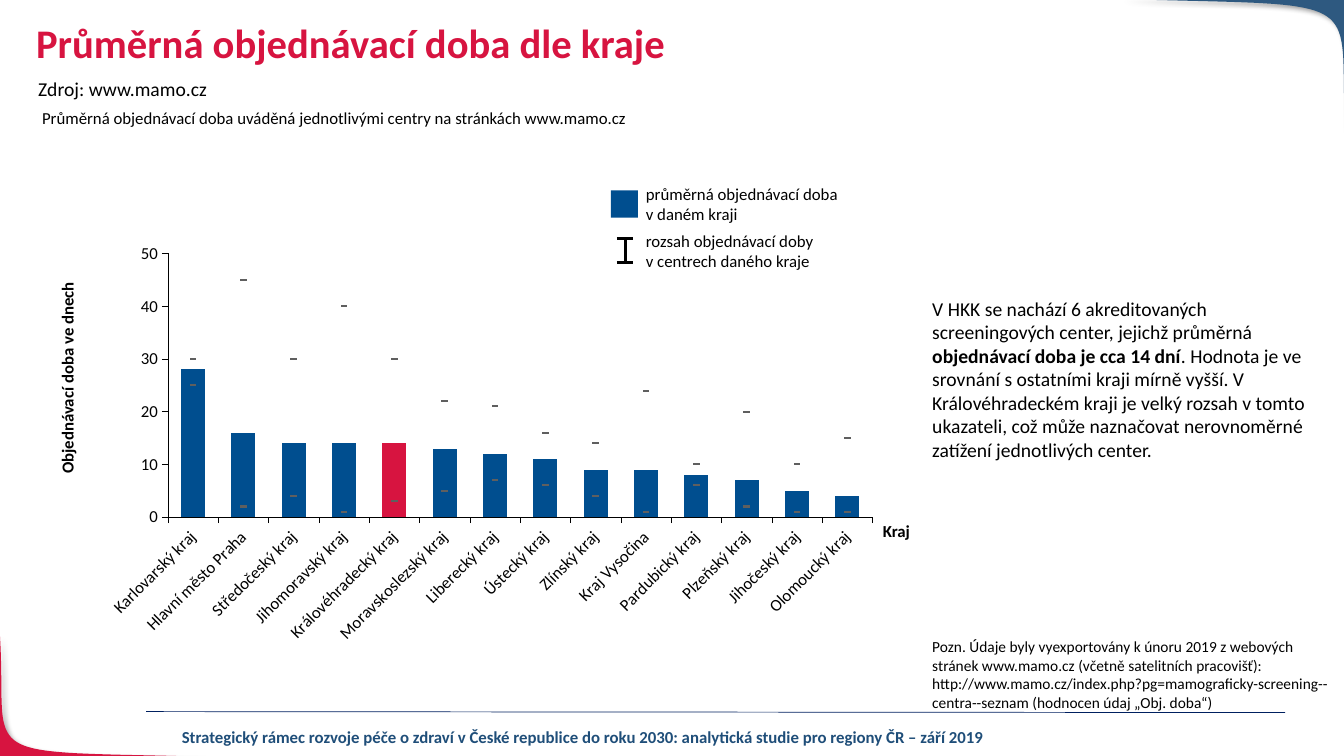
from lxml.etree import SubElement
from pptx import Presentation
from pptx.chart.data import CategoryChartData
from pptx.dml.color import RGBColor
from pptx.enum.chart import XL_CHART_TYPE, XL_MARKER_STYLE, XL_TICK_MARK
from pptx.enum.shapes import MSO_CONNECTOR, MSO_SHAPE
from pptx.enum.text import PP_ALIGN
from pptx.oxml import parse_xml
from pptx.oxml.ns import nsdecls, qn
from pptx.util import Pt

BLACK = RGBColor(0x00, 0x00, 0x00)
RED = RGBColor(0xD7, 0x14, 0x40)
BLUE = RGBColor(0x00, 0x4E, 0x8F)
STEEL = RGBColor(0x2E, 0x59, 0x80)
NAVY = RGBColor(0x00, 0x20, 0x60)
FOOT = RGBColor(0x1F, 0x4E, 0x79)
GREY = RGBColor(0x5F, 0x5F, 0x5F)

WAITS = [
    ("Karlovarský kraj", 28, 25, 30),
    ("Hlavní město Praha", 16, 2, 45),
    ("Středočeský kraj", 14, 4, 30),
    ("Jihomoravský kraj", 14, 1, 40),
    ("Královéhradecký kraj", 14, 3, 30),
    ("Moravskoslezský kraj", 13, 5, 22),
    ("Liberecký kraj", 12, 7, 21),
    ("Ústecký kraj", 11, 6, 16),
    ("Zlínský kraj", 9, 4, 14),
    ("Kraj Vysočina", 9, 1, 24),
    ("Pardubický kraj", 8, 6, 10),
    ("Plzeňský kraj", 7, 2, 20),
    ("Jihočeský kraj", 5, 1, 10),
    ("Olomoucký kraj", 4, 1, 15),
]
MARKED = 4

LAYOUT = """<c:layout %s><c:manualLayout><c:layoutTarget val="inner"/>
<c:xMode val="edge"/><c:yMode val="edge"/><c:x val="0.137"/><c:y val="0.061"/>
<c:w val="0.852"/><c:h val="0.58"/></c:manualLayout></c:layout>"""
LINES = """<c:lineChart %s><c:grouping val="standard"/>
<c:varyColors val="0"/><c:marker val="1"/></c:lineChart>"""
SHADOW = """<a:effectLst %s><a:outerShdw blurRad="50800" dist="38100" dir="2700000">
<a:srgbClr val="000000"><a:alpha val="40000"/></a:srgbClr></a:outerShdw></a:effectLst>"""


class Board:
    def __init__(self, slide, font):
        self.shapes = slide.shapes
        self.font = font

    def style(self, font, size, color=BLACK, bold=False):
        font.name = self.font
        font.size = Pt(size)
        font.color.rgb = color
        font.bold = bold

    def text(self, box, words, size, color=BLACK, bold=False, align=PP_ALIGN.LEFT, turn=0):
        shape = self.shapes.add_textbox(*map(Pt, box))
        shape.rotation = turn
        frame = shape.text_frame
        frame.word_wrap = True
        frame.text = words
        for line in frame.paragraphs:
            line.alignment = align
            for run in line.runs:
                self.style(run.font, size, color, bold)
        return frame

    def rect(self, box, color):
        shape = self.shapes.add_shape(MSO_SHAPE.RECTANGLE, *map(Pt, box))
        shape.shadow.inherit = False
        shape.fill.solid()
        shape.fill.fore_color.rgb = color
        shape.line.fill.background()

    def line(self, ends, color, width):
        line = self.shapes.add_connector(MSO_CONNECTOR.STRAIGHT, *map(Pt, ends))
        line.line.color.rgb = color
        line.line.width = Pt(width)
        SubElement(line._element.spPr, qn("a:effectLst"))

    def curve(self, knots, edge, color, steps=40):
        dots = []
        for step in range(steps + 1):
            t = step / steps
            parts = ((1 - t) ** 3, 3 * t * (1 - t) ** 2, 3 * t * t * (1 - t), t ** 3)
            dots.append(tuple(Pt(sum(p * k[i] for p, k in zip(parts, knots))) for i in (0, 1)))
        dots.append(tuple(map(Pt, edge)))
        form = self.shapes.build_freeform(*dots[0])
        form.add_line_segments(dots[1:], close=True)
        shape = form.convert_to_shape()
        shape.fill.solid()
        shape.fill.fore_color.rgb = color
        shape.line.fill.background()
        shape._element.spPr.append(parse_xml(SHADOW % nsdecls("a")))

    def axis(self, axis):
        axis.has_major_gridlines = False
        axis.major_tick_mark = XL_TICK_MARK.OUTSIDE
        axis.minor_tick_mark = XL_TICK_MARK.NONE
        axis.format.line.color.rgb = BLACK
        axis.format.line.width = Pt(0.25)
        self.style(axis.tick_labels.font, 12)

    def chart(self, box, rows):
        names, *lists = zip(*rows)
        data = CategoryChartData()
        data.categories = names
        for count, vals in enumerate(lists, 1):
            data.add_series(f"Series {count}", vals)
        frame = self.shapes.add_chart(XL_CHART_TYPE.COLUMN_CLUSTERED, *map(Pt, box), data)
        chart = frame.chart
        chart.has_legend = False
        chart.has_title = False
        self.style(chart.font, 13)
        cat, val = chart.category_axis, chart.value_axis
        self.axis(cat)
        self.axis(val)
        cat._element.find(qn("c:txPr")).find(qn("a:bodyPr")).set("rot", "-2700000")
        val.minimum_scale, val.maximum_scale, val.major_unit = 0, 50, 10
        val.tick_labels.number_format = "#,##0"
        val.tick_labels.number_format_is_linked = False

        bars = chart.plots[0]
        bars.gap_width = 110
        bars.vary_by_categories = False
        means = bars.series[0]
        for part, color in ((means, BLUE), (means.points[MARKED], RED)):
            part.format.fill.solid()
            part.format.fill.fore_color.rgb = color
        self.ranges(chart, bars._element)
        area = chart._chartSpace.chart.plotArea
        for old in area.findall(qn("c:layout")):
            area.remove(old)
        area.insert(0, parse_xml(LAYOUT % nsdecls("c")))

    def ranges(self, chart, bars):
        lines = parse_xml(LINES % nsdecls("c"))
        flag = lines.find(qn("c:marker"))
        for ser in bars.findall(qn("c:ser"))[1:]:
            for extra in ser.findall(qn("c:invertIfNegative")):
                ser.remove(extra)
            flag.addprevious(ser)
        for link in bars.findall(qn("c:axId")):
            SubElement(lines, qn("c:axId")).set("val", link.get("val"))
        bars.addnext(lines)
        for ser in chart.plots[1].series:
            ser.smooth = False
            ser.format.line.fill.background()
            mark = ser.marker
            mark.style = XL_MARKER_STYLE.DASH
            mark.size = 4
            mark.format.fill.solid()
            mark.format.fill.fore_color.rgb = GREY
            mark.format.line.fill.background()


def main():
    deck = Presentation()
    deck.slide_width, deck.slide_height = Pt(960), Pt(540)
    board = Board(deck.slides.add_slide(deck.slide_layouts[6]), "Calibri")

    board.curve([(153.4, 540.7), (-24.5, 535.7), (5.8, 546.5), (0, 453.6)], (-0.7, 540.7), RED)
    board.curve([(799.9, -0.7), (986.4, 5), (954.7, -7.2), (961.2, 102.2)], (961.2, -0.7), STEEL)
    board.line((104.4, 508.3, 918, 509), NAVY, 0.5)
    board.text((113, 515.5, 607, 21.6),
               "Strategický rámec rozvoje péče o zdraví v České republice do roku 2030: "
               "analytická studie pro regiony ČR – září 2019", 12, FOOT, True, PP_ALIGN.CENTER)

    title = board.text((18.7, 13, 828, 49.7), "Průměrná objednávací doba dle kraje", 29, RED, True)
    title.paragraphs[0].line_spacing = 0.9
    board.text((20.2, 51.1, 610, 24.5), "Zdroj: www.mamo.cz", 14)
    board.text((23, 73.4, 528.5, 21.6),
               "Průměrná objednávací doba uváděná jednotlivými centry na stránkách www.mamo.cz", 12)

    board.chart((38.9, 161.3, 591, 324.7), WAITS)
    board.text((-27.4, 257, 154.8, 26), "Objednávací doba ve dnech", 12,
               bold=True, align=PP_ALIGN.CENTER, turn=270)
    board.text((623.5, 368.6, 77.8, 20.2), "Kraj", 12, bold=True)

    board.rect((436.3, 136.1, 19.4, 19.4), BLUE)
    left, mid, right, top, base = 440.6, 446.6, 452.2, 170.6, 187.2
    for ends in ((mid, top, mid, base), (left, top, right, top), (left, base, right, base)):
        board.line(ends, BLACK, 2.25)
    board.text((454.3, 127.4, 175.7, 36), "průměrná objednávací doba\vv daném kraji", 12)
    board.text((454.3, 161.3, 175.7, 36), "rozsah objednávací doby\vv centrech daného kraje", 12)

    notes = board.text((658.8, 174.2, 301, 338.4),
                       "V HKK se nachází 6 akreditovaných screeningových center, jejichž průměrná ", 14)
    notes.margin_top = Pt(37.8)
    for words, bold in (
        ("objednávací doba je cca 14 dní", True),
        (". Hodnota je ve srovnání s ostatními kraji mírně vyšší. V Královéhradeckém kraji "
         "je velký rozsah v tomto ukazateli, což může naznačovat nerovnoměrné zatížení "
         "jednotlivých center.", False),
    ):
        run = notes.paragraphs[0].add_run()
        run.text = words
        board.style(run.font, 14, bold=bold)
    remark = notes.add_paragraph()
    remark.text = ("Pozn. Údaje byly vyexportovány k únoru 2019 z webových stránek www.mamo.cz "
                   "(včetně satelitních pracovišť): http://www.mamo.cz/index.php?pg=mamograficky-"
                   "screening--centra--seznam (hodnocen údaj „Obj. doba“)")
    remark.space_before = Pt(125.7)
    board.style(remark.runs[0].font, 11)

    deck.save("out.pptx")


if __name__ == "__main__":
    main()
